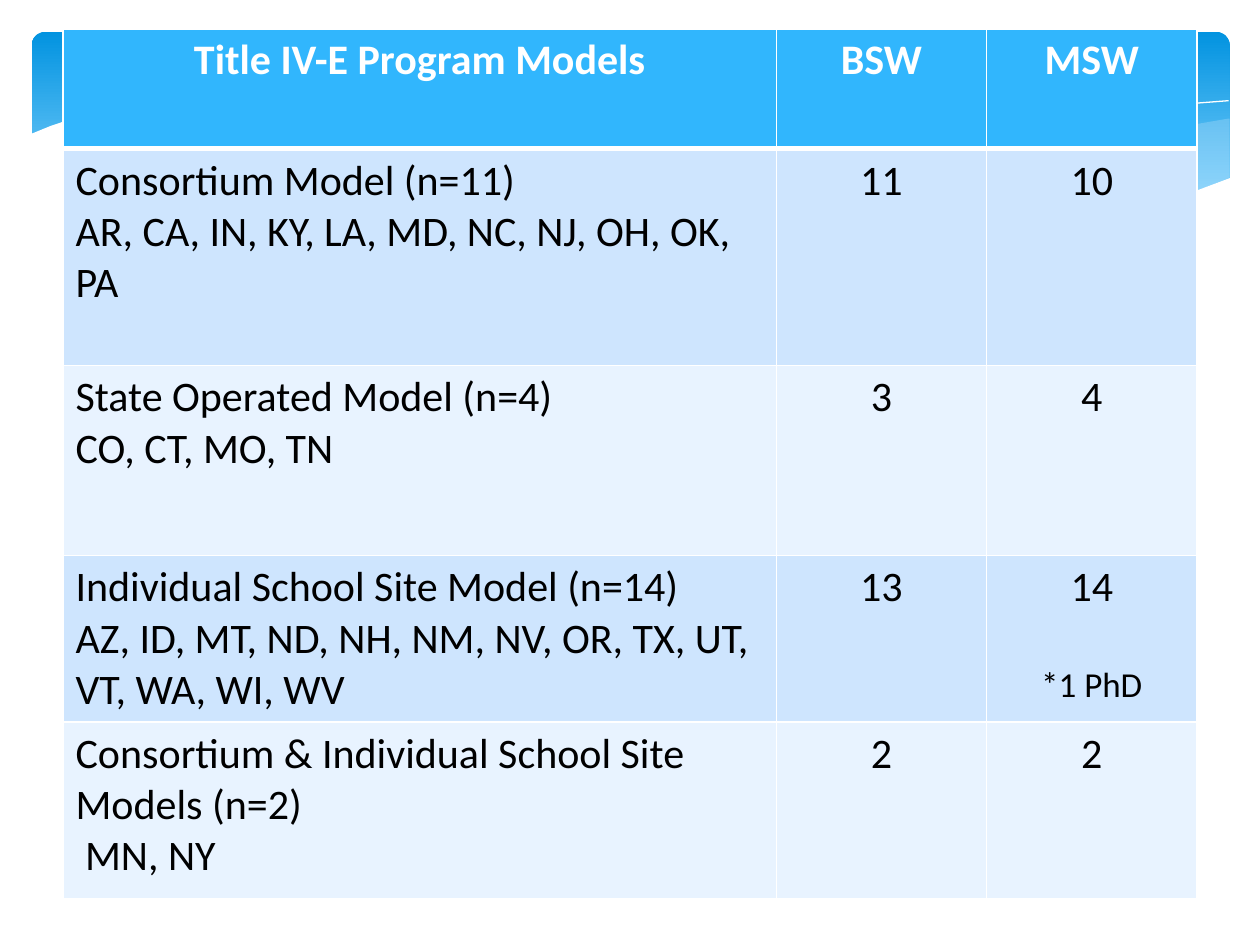
import pptx
import pptx.util
import pptx.dml.color
import pptx.enum.shapes
import pptx.enum.text
import pptx.oxml
import pptx.oxml.ns
from lxml import etree

Cm = pptx.util.Cm
Pt = pptx.util.Pt
CENTER = pptx.enum.text.PP_ALIGN.CENTER
LEFT = pptx.enum.text.PP_ALIGN.LEFT

# Wave outlines, in centimetres
RIGHT_WAVE = [
    (24.77, 2.39), (24.08, 2.51), (23.01, 2.72), (21.87, 3), (20.45, 3.33),
    (18.52, 3.73), (16.79, 4.06), (18.26, 4.24), (19.84, 4.37), (21.21, 4.37),
    (22.38, 4.24), (23.39, 4.06), (24.1, 3.86), (24.79, 3.58), (24.79, 2.39)]
MIDDLE_WAVE = [
    (22.68, 4.24), (21.26, 4.04), (19.69, 3.78), (17.93, 3.4), (15.98, 2.95),
    (14.1, 2.54), (12.42, 2.26), (10.67, 2.08), (9.17, 2.03), (7.26, 2.18),
    (9.19, 2.46), (11.4, 2.95), (13.46, 3.43), (15.27, 3.81), (17.27, 4.14),
    (19, 4.32), (20.78, 4.39)]
LONG_CURVE = [
    (7.85, 2.29), (8.97, 2.13), (10.57, 2.06), (12.42, 2.13), (14.12, 2.31),
    (16.15, 2.62), (18.47, 3.05), (21.11, 3.68), (23.04, 4.22)]
RIGHT_CURVE = [
    (15.57, 3.84), (17.65, 3.3), (19.71, 2.82), (22, 2.36), (23.47, 2.13),
    (24.77, 2.03)]
WHITE_WAVE = [
    (24.82, 3.58), (24.13, 3.84), (23.37, 4.04), (21.92, 4.29), (20.55, 4.34),
    (18.9, 4.27), (16.97, 4.06), (14.71, 3.66), (11.35, 2.9), (8.64, 2.34),
    (6.35, 2.06), (4.5, 1.98), (2.69, 2.11), (1.7, 2.31), (1.02, 2.54),
    (0.58, 2.72), (0.58, 5.69), (24.82, 5.69)]

# Table content: each cell is a list of paragraphs
HEADER = ["Title IV-E Program Models", "BSW", "MSW"]
MODELS = [
    (["Consortium Model (n=11)", "AR, CA, IN, KY, LA, MD, NC, NJ, OH, OK, PA"],
     ["11"], ["10"]),
    (["State Operated Model (n=4)", "CO, CT, MO, TN"], ["3"], ["4"]),
    (["Individual School Site Model (n=14)",
      "AZ, ID, MT, ND, NH, NM, NV, OR, TX, UT, VT, WA, WI, WV"],
     ["13"], ["14", "*1 PhD"]),
    (["Consortium & Individual School Site Models (n=2)", " MN, NY"],
     ["2"], ["2"]),
]
COLUMN_WIDTHS = [14.38, 4.24, 4.24]
ROW_HEIGHTS = [2.42, 4.37, 3.83, 3.35, 3.56]
BAND_COLORS = ["CEE5FE", "E8F3FF"]


def color(hex_string):
    return pptx.dml.color.RGBColor.from_string(hex_string)


def add_banner(slide):
    banner = slide.shapes.add_shape(
        pptx.enum.shapes.MSO_SHAPE.ROUNDED_RECTANGLE,
        Cm(0.64), Cm(0.64), Cm(24.15), Cm(3.96))
    banner.adjustments[0] = 0.07
    banner.shadow.inherit = False
    banner.line.fill.background()
    banner.fill.gradient()
    banner.fill.gradient_angle = 270
    stops = zip(banner.fill.gradient_stops, [0, 0.9], ["0293E0", "83D3FE"])
    for stop, position, hex_string in stops:
        stop.position = position
        stop.color.rgb = color(hex_string)


def add_outline(slide, points, closed):
    corners = [(Cm(x), Cm(y)) for x, y in points]
    builder = slide.shapes.build_freeform(*corners[0])
    builder.add_line_segments(corners[1:], close=closed)
    shape = builder.convert_to_shape()
    shape.shadow.inherit = False
    return shape


def add_wave(slide, points, hex_string, opacity=100):
    wave = add_outline(slide, points, True)
    wave.line.fill.background()
    wave.fill.solid()
    wave.fill.fore_color.rgb = color(hex_string)
    if opacity < 100:
        color_element = wave.fill._xPr.find(".//" + pptx.oxml.ns.qn("a:srgbClr"))
        alpha = etree.SubElement(color_element, pptx.oxml.ns.qn("a:alpha"))
        alpha.set("val", str(opacity * 1000))


def add_curve(slide, points):
    curve = add_outline(slide, points, False)
    curve.fill.background()
    curve.line.color.rgb = color("FFFFFF")
    curve.line.width = Pt(0)


def set_borders(cell, bottom_width):
    properties = cell._tc.get_or_add_tcPr()
    sides = {"lnL": 1, "lnR": 1, "lnT": 1, "lnB": bottom_width}
    # Borders come before the fill in the cell properties
    for index, (side, width) in enumerate(sides.items()):
        properties.insert(index, pptx.oxml.parse_xml(
            f'<a:{side} {pptx.oxml.ns.nsdecls("a")} w="{Pt(width)}">'
            '<a:solidFill><a:srgbClr val="FFFFFF"/></a:solidFill>'
            f'</a:{side}>'))


def fill_cell(cell, lines, fill, text_color, alignment, header=False):
    cell.fill.solid()
    cell.fill.fore_color.rgb = color(fill)
    set_borders(cell, 3 if header else 1)
    cell.text = "\n".join(lines)
    for paragraph in cell.text_frame.paragraphs:
        paragraph.alignment = alignment
        paragraph.font.name = "Calibri"
        paragraph.font.size = Pt(24)
        paragraph.font.bold = header
        paragraph.font.color.rgb = color(text_color)


def add_models_table(slide):
    table = slide.shapes.add_table(
        len(ROW_HEIGHTS), len(COLUMN_WIDTHS), Cm(1.27), Cm(0.58),
        Cm(sum(COLUMN_WIDTHS)), Cm(sum(ROW_HEIGHTS))).table
    for column, width in zip(table.columns, COLUMN_WIDTHS):
        column.width = Cm(width)
    for row, height in zip(table.rows, ROW_HEIGHTS):
        row.height = Cm(height)

    for cell, heading in zip(table.rows[0].cells, HEADER):
        fill_cell(cell, [heading], "31B6FD", "FFFFFF", CENTER, header=True)
    for row_number, model in enumerate(MODELS, start=1):
        fill = BAND_COLORS[(row_number - 1) % 2]
        for column_number, lines in enumerate(model):
            fill_cell(table.cell(row_number, column_number), lines, fill,
                      "000000", CENTER if column_number else LEFT)

    # The PhD remark is smaller and set apart from the count
    remark = table.cell(3, 2).text_frame.paragraphs[1]
    remark.font.size = Pt(20)
    remark.space_before = Pt(29)


def main():
    presentation = pptx.Presentation()
    presentation.slide_width = Cm(25.4)
    presentation.slide_height = Cm(19.05)
    slide = presentation.slides.add_slide(presentation.slide_layouts[6])

    # Banner with waves
    add_banner(slide)
    add_wave(slide, RIGHT_WAVE, "C6E7FC", 29)
    add_wave(slide, MIDDLE_WAVE, "C6E7FC", 40)
    add_curve(slide, LONG_CURVE)
    add_curve(slide, RIGHT_CURVE)
    add_wave(slide, WHITE_WAVE, "FFFFFF")

    # Program models
    add_models_table(slide)
    presentation.save("out.pptx")


if __name__ == "__main__":
    main()
